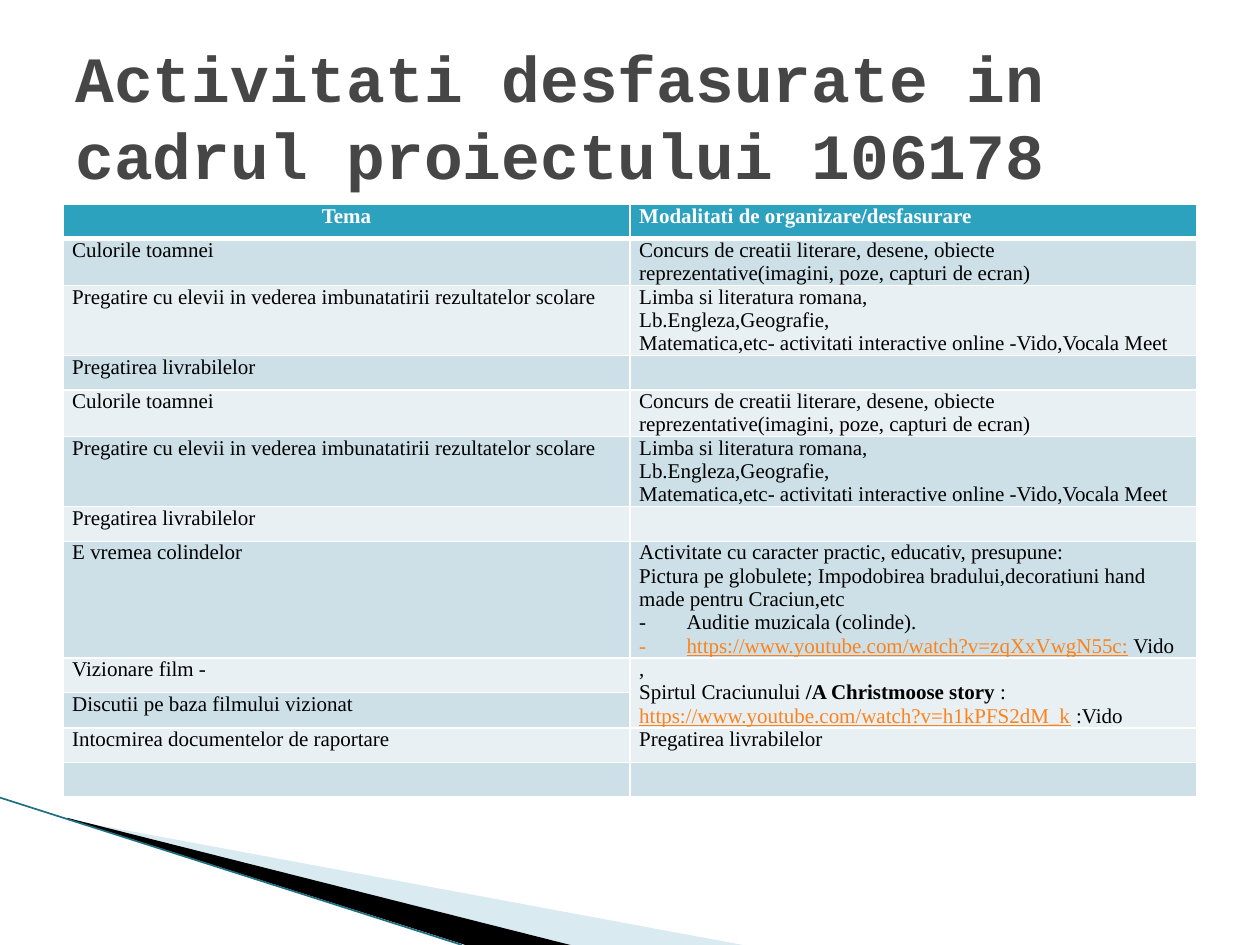
from lxml import etree
from pptx import Presentation
from pptx import util as u
from pptx.dml.color import RGBColor
from pptx.enum import shapes, text
from pptx.oxml.ns import qn

Pt = u.Pt
WHITE = RGBColor(0xFF, 0xFF, 0xFF)
BLACK = RGBColor(0, 0, 0)
GREY = RGBColor(0x46, 0x46, 0x46)
TEAL = RGBColor(0x2D, 0xA2, 0xBF)
DARK_TEAL = RGBColor(0x1F, 0x6F, 0x82)
PALE_TEAL = RGBColor(0xA0, 0xCB, 0xDC)
ORANGE = RGBColor(0xFF, 0x81, 0x19)
BANDS = RGBColor(0xE8, 0xF0, 0xF4), RGBColor(0xCD, 0xE0, 0xE8)
TABLE_FONT = "Times New Roman"

TITLE = "Activitati desfasurate in cadrul proiectului 106178"

# A cell is a list of paragraphs; "- " starts a bullet.
# A paragraph is a string or a list of (text, style) runs.
CONTEST = ["Concurs de creatii literare, desene, obiecte "
           "reprezentative(imagini, poze, capturi de ecran)"]
SUBJECTS = ["Limba si literatura romana,", "Lb.Engleza,Geografie,",
            "Matematica,etc- activitati interactive online -Vido,Vocala Meet"]
AUTUMN = (26.6, ["Culorile toamnei"], CONTEST)
LESSONS = (40, ["Pregatire cu elevii in vederea imbunatatirii rezultatelor scolare"],
           SUBJECTS)
REPORTS = (19.8, ["Pregatirea livrabilelor"], [])
CAROLS = [
    "Activitate cu caracter practic, educativ, presupune:",
    "Pictura pe globulete; Impodobirea bradului,decoratiuni hand made pentru Craciun,etc",
    "- Auditie muzicala (colinde).",
    [("- https://www.youtube.com/watch?v=zqXxVwgN55c:", "link"), (" Vido", "")],
]
FILM = [
    ",",
    [("Spirtul Craciunului", ""), (" /A Christmoose story", "bold"), (" :", "")],
    [("https://www.youtube.com/watch?v=h1kPFS2dM_k", "link"), (" :Vido", "")],
]
ROWS = [  # height, theme, way of working
    (19.6, [[("Tema", "head")]], [[("Modalitati de organizare/desfasurare", "head")]]),
    AUTUMN, LESSONS, REPORTS,
    AUTUMN, LESSONS, REPORTS,
    (66.4, ["E vremea colindelor"], CAROLS),
    (19.8, ["Vizionare film -"], FILM),
    (19.8, ["Discutii pe baza filmului vizionat"], []),
    (19.8, ["Intocmirea documentelor de raportare"], ["Pregatirea livrabilelor"]),
    (19.8, [], []),
]
FILM_ROW = 8

WEDGES = [  # colour, opacity in percent, corners
    (PALE_TEAL, 40, [(39.6, 468.5), (424.5, 540), (326, 540), (39.6, 468)]),
    (BLACK, 100, [(38.2, 467.3), (326, 540), (266, 540), (38.9, 468)]),
]


def add_wedge(page, color, opacity, corners):
    points = [(Pt(x), Pt(y)) for x, y in corners]
    builder = page.shapes.build_freeform(*points[0], scale=1.0)
    builder.add_line_segments(points[1:], close=True)
    wedge = builder.convert_to_shape()
    wedge.shadow.inherit = False
    wedge.line.fill.background()
    wedge.fill.solid()
    wedge.fill.fore_color.rgb = color
    if opacity < 100:
        tint = wedge._element.spPr.find(".//" + qn("a:srgbClr"))
        etree.SubElement(tint, qn("a:alpha"), val=str(opacity * 1000))


def add_edge(page):
    edge = page.shapes.add_connector(
        shapes.MSO_CONNECTOR.STRAIGHT, Pt(0), Pt(455.8), Pt(264), Pt(540))
    edge.line.color.rgb = DARK_TEAL
    edge.line.width = Pt(0.95)
    etree.SubElement(edge._element.spPr, qn("a:effectLst"))


def add_title(page):
    box = page.shapes.add_textbox(Pt(36), Pt(21.6), Pt(648), Pt(90))
    frame = box.text_frame
    frame.word_wrap = True
    frame.vertical_anchor = text.MSO_ANCHOR.TOP
    frame.margin_top = frame.margin_bottom = 0
    span = frame.paragraphs[0].add_run()
    span.text = TITLE
    span.font.name = "Courier New"
    span.font.size = Pt(36.9)
    span.font.bold = True
    span.font.color.rgb = GREY


def set_borders(cell, bottom):
    props = cell._tc.get_or_add_tcPr()
    widths = zip(("a:lnL", "a:lnR", "a:lnT", "a:lnB"), (1, 1, 1, bottom))
    for place, (side, width) in enumerate(widths):
        line = etree.Element(qn(side), w=str(Pt(width)))
        fill = etree.SubElement(line, qn("a:solidFill"))
        etree.SubElement(fill, qn("a:srgbClr"), val=str(WHITE))
        props.insert(place, line)


def add_bullet(para):
    props = para._p.get_or_add_pPr()
    indent = Pt(27)
    props.set("marL", str(indent))
    props.set("indent", str(-indent))
    etree.SubElement(props, qn("a:buFont"), typeface=TABLE_FONT)
    etree.SubElement(props, qn("a:buChar"), char="-")


def write_cell(cell, paragraphs):
    frame = cell.text_frame
    if not paragraphs:
        etree.SubElement(frame.paragraphs[0]._p, qn("a:endParaRPr"), sz="1200")
    for index, runs in enumerate(paragraphs):
        para = frame.paragraphs[0] if index == 0 else frame.add_paragraph()
        if isinstance(runs, str):
            runs = [(runs, "")]
        if runs[0][0].startswith("- "):
            add_bullet(para)
        for words, style in runs:
            span = para.add_run()
            span.text = words.removeprefix("- ")
            font = span.font
            font.name = TABLE_FONT
            font.size = Pt(12)
            font.bold = style in ("head", "bold")
            font.underline = style == "link"
            font.color.rgb = {"head": WHITE, "link": ORANGE}.get(style, BLACK)


def add_activities(page):
    height = sum(row[0] for row in ROWS)
    frame = page.shapes.add_table(len(ROWS), 2, Pt(36), Pt(116.8), Pt(648), Pt(height))
    table = frame.table
    for r, (row_height, *cells) in enumerate(ROWS):
        table.rows[r].height = Pt(row_height)
        for c, paragraphs in enumerate(cells):
            cell = table.cell(r, c)
            cell.margin_left = cell.margin_right = Pt(5.3)
            cell.margin_top = cell.margin_bottom = 0
            cell.fill.solid()
            cell.fill.fore_color.rgb = BANDS[r % 2] if r else TEAL
            set_borders(cell, bottom=1 if r else 3)
            write_cell(cell, paragraphs)
    table.cell(0, 0).text_frame.paragraphs[0].alignment = text.PP_ALIGN.CENTER
    table.cell(FILM_ROW, 1).merge(table.cell(FILM_ROW + 1, 1))


def main():
    deck = Presentation()
    deck.slide_width, deck.slide_height = Pt(720), Pt(540)
    page = deck.slides.add_slide(deck.slide_layouts[6])
    for wedge in WEDGES:
        add_wedge(page, *wedge)
    add_edge(page)
    add_activities(page)
    add_title(page)
    deck.save("out.pptx")


if __name__ == "__main__":
    main()
